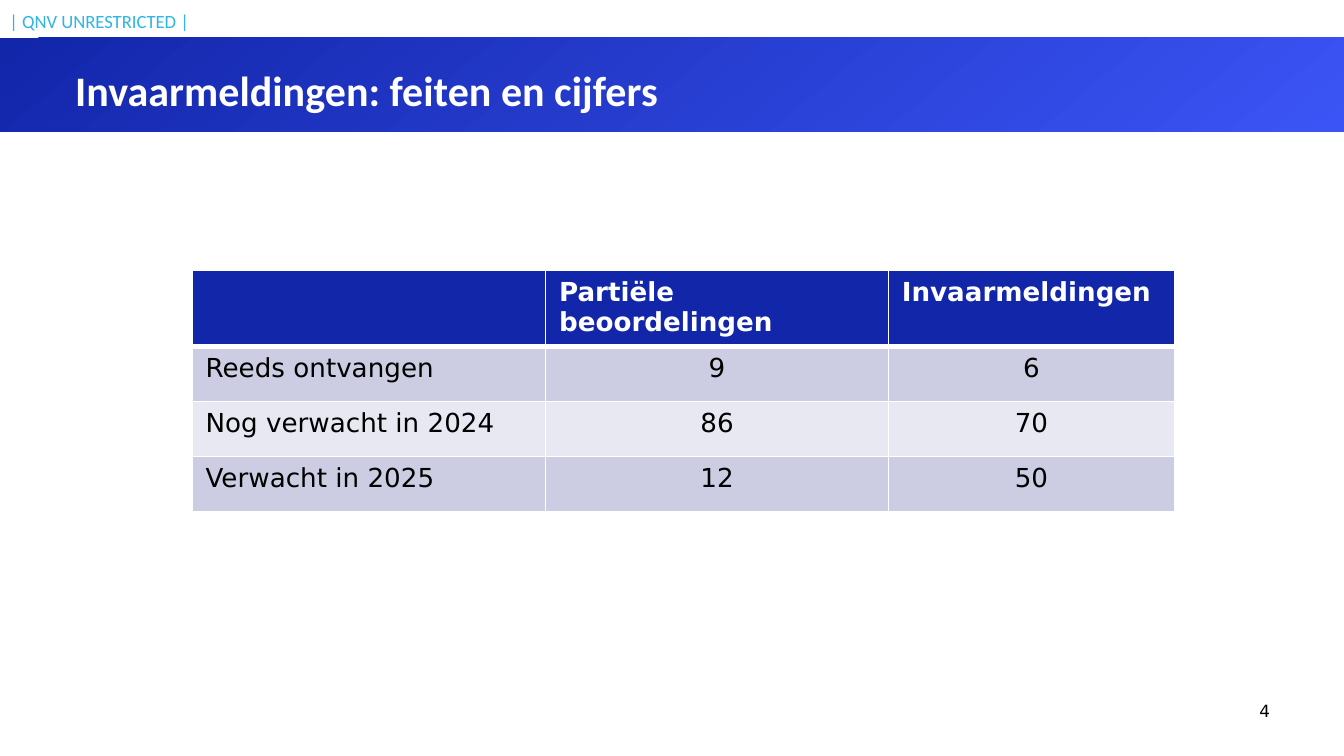
import pptx
import pptx.dml.color
import pptx.enum.shapes
import pptx.enum.text
import pptx.oxml
import pptx.oxml.ns
import pptx.util
from lxml import etree

Inches, Pt = pptx.util.Inches, pptx.util.Pt
ALIGN = pptx.enum.text.PP_ALIGN
ANCHOR = pptx.enum.text.MSO_ANCHOR

# Content
LABEL = "| QNV UNRESTRICTED |"
TITLE = "Invaarmeldingen: feiten en cijfers"
PAGE = "4"
ROWS = [
    ("", "Partiële beoordelingen", "Invaarmeldingen"),
    ("Reeds ontvangen", "9", "6"),
    ("Nog verwacht in 2024", "86", "70"),
    ("Verwacht in 2025", "12", "50"),
]
COL_WIDTHS = [2.63, 2.55, 2.13]
ROW_HEIGHTS = [0.5, 0.41, 0.41, 0.41]
BLUE, LIGHT_BLUE, CYAN = "1226AA", "3B54F5", "2FB5E4"
WHITE, BLACK = "FFFFFF", "000000"
BANDS = ["CCCDE2", "E7E8F1"]


def rgb(color):
    return pptx.dml.color.RGBColor.from_string(color)


def write(tf, text, size, color, font="DejaVu Sans", bold=False,
          align=ALIGN.LEFT):
    p = tf.paragraphs[0]
    p.alignment = align
    r = p.add_run()
    r.text = text
    r.font.name = font
    r.font.size = Pt(size)
    r.font.bold = bold
    r.font.color.rgb = rgb(color)


def add_text(left, top, width, height, text, anchor=ANCHOR.TOP, **fmt):
    box = s.shapes.add_textbox(*map(Inches, (left, top, width, height)))
    tf = box.text_frame
    tf.word_wrap = True
    tf.vertical_anchor = anchor
    tf.margin_left = tf.margin_right = tf.margin_top = tf.margin_bottom = 0
    write(tf, text, **fmt)


def set_borders(cell, color, **widths):
    """Line widths in points for the sides L, R, T and B, in that order."""
    tcPr = cell._tc.get_or_add_tcPr()
    for i, (side, width) in enumerate(widths.items()):
        ln = etree.Element(pptx.oxml.ns.qn("a:ln" + side), w=str(Pt(width)))
        fill = etree.SubElement(ln, pptx.oxml.ns.qn("a:solidFill"))
        etree.SubElement(fill, pptx.oxml.ns.qn("a:srgbClr"), val=color)
        tcPr.insert(i, ln)


# Widescreen slide, 16:9
prs = pptx.Presentation()
prs.slide_width, prs.slide_height = Inches(10), Inches(10 * 9 / 16)
s = prs.slides.add_slide(prs.slide_layouts[6])

# Title band
band = s.shapes.add_shape(pptx.enum.shapes.MSO_SHAPE.RECTANGLE,
                          0, Inches(0.28), prs.slide_width, Inches(0.7))
band.shadow.inherit = False
band.line.fill.background()
band.fill.gradient()
band.fill.gradient_angle = 310
for stop, color in zip(band.fill.gradient_stops, (BLUE, LIGHT_BLUE)):
    stop.color.rgb = rgb(color)

# Label, title and page number
add_text(0.07, 0.07, 1.36, 0.17, LABEL, size=10, color=CYAN, font="Calibri")
add_text(0.56, 0.48, 8.89, 0.4, TITLE, size=22.5, color=WHITE,
         font="Calibri", bold=True)
add_text(8.88, 5.18, 0.57, 0.22, PAGE, anchor=ANCHOR.MIDDLE, size=9,
         color=BLACK, align=ALIGN.RIGHT)

# Table of figures
table = s.shapes.add_table(
    len(ROWS), len(COL_WIDTHS), Inches(1.43), Inches(2.01),
    Inches(sum(COL_WIDTHS)), Inches(sum(ROW_HEIGHTS))).table
for col, width in zip(table.columns, COL_WIDTHS):
    col.width = Inches(width)
for row, height in zip(table.rows, ROW_HEIGHTS):
    row.height = Inches(height)

for i, texts in enumerate(ROWS):
    header = i == 0
    for j, text in enumerate(texts):
        cell = table.cell(i, j)
        cell.fill.solid()
        cell.fill.fore_color.rgb = rgb(BLUE if header else BANDS[(i - 1) % 2])
        set_borders(cell, WHITE, L=1, R=1, T=3 if i == 1 else 1,
                    B=3 if header else 1)
        if text:
            write(cell.text_frame, text, size=14, bold=header,
                  color=WHITE if header else BLACK,
                  align=ALIGN.LEFT if header or j == 0 else ALIGN.CENTER)

prs.save("out.pptx")
